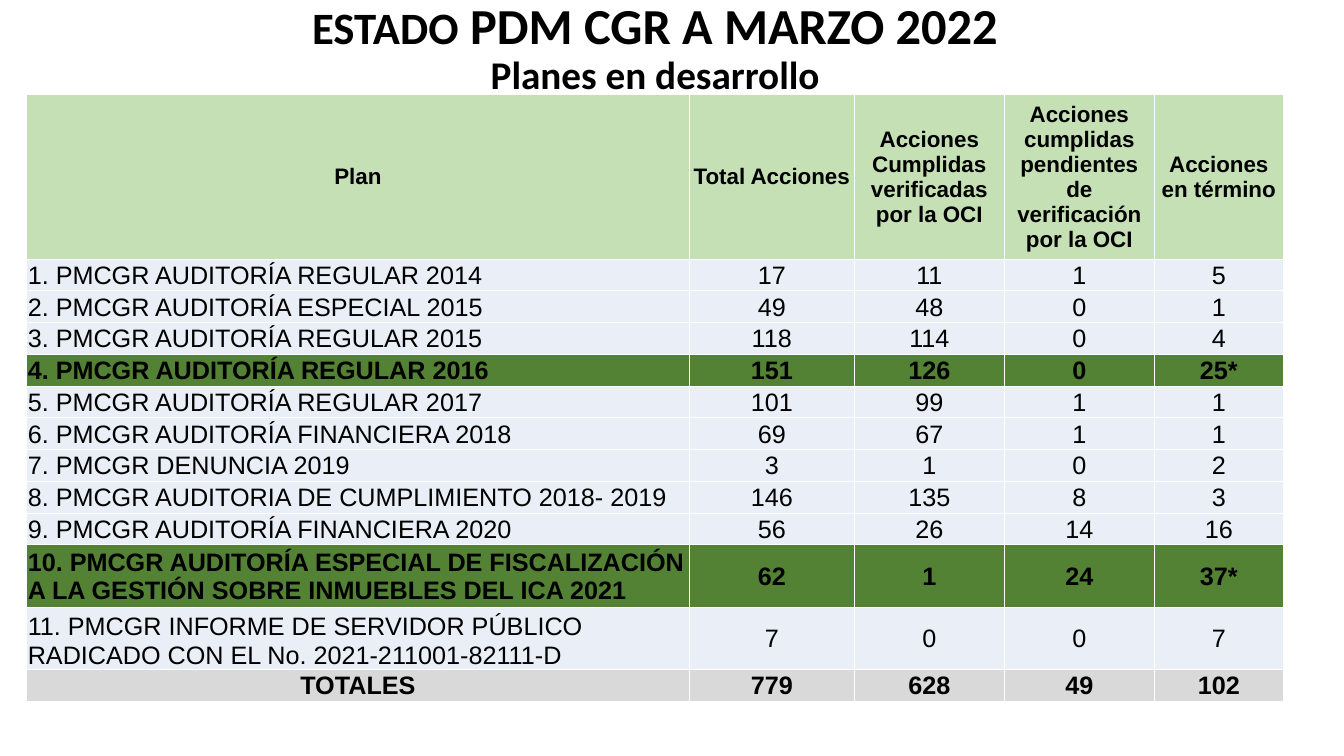
import lxml.etree
import pptx
import pptx.dml.color
import pptx.enum.text
import pptx.oxml.ns
import pptx.util

Cm, Pt = pptx.util.Cm, pptx.util.Pt
qn = pptx.oxml.ns.qn
ALIGN = pptx.enum.text.PP_ALIGN
ANCHOR = pptx.enum.text.MSO_ANCHOR

HEADER, PLAIN, MARKED, TOTAL = "C5E0B4", "EAEFF7", "548235", "D9D9D9"
COLUMN_WIDTHS = [16.7, 4.16, 3.78, 3.78, 3.25]
HEADER_HEIGHT, LINE_HEIGHT, DOUBLE_HEIGHT = 4.16, 0.8, 1.57

HEADINGS = [
    "Plan",
    "Total Acciones",
    "Acciones Cumplidas verificadas por la OCI",
    "Acciones cumplidas pendientes de verificación por la OCI",
    "Acciones en término",
]
PLANS = [
    ["1. PMCGR AUDITORÍA REGULAR 2014", "17", "11", "1", "5"],
    ["2. PMCGR AUDITORÍA ESPECIAL 2015", "49", "48", "0", "1"],
    ["3. PMCGR AUDITORÍA REGULAR 2015", "118", "114", "0", "4"],
    ["4. PMCGR AUDITORÍA REGULAR 2016", "151", "126", "0", "25*"],
    ["5. PMCGR AUDITORÍA REGULAR 2017", "101", "99", "1", "1"],
    ["6. PMCGR AUDITORÍA FINANCIERA 2018", "69", "67", "1", "1"],
    ["7. PMCGR DENUNCIA 2019", "3", "1", "0", "2"],
    ["8. PMCGR AUDITORIA DE CUMPLIMIENTO 2018- 2019", "146", "135", "8", "3"],
    ["9. PMCGR AUDITORÍA FINANCIERA 2020", "56", "26", "14", "16"],
    ["10. PMCGR AUDITORÍA ESPECIAL DE FISCALIZACIÓN A LA GESTIÓN SOBRE "
     "INMUEBLES DEL ICA 2021", "62", "1", "24", "37*"],
    ["11. PMCGR INFORME DE SERVIDOR PÚBLICO RADICADO CON EL "
     "No. 2021-211001-82111-D", "7", "0", "0", "7"],
]
TOTALS = ["TOTALES", "779", "628", "49", "102"]


def rgb(hex_color):
    return pptx.dml.color.RGBColor.from_string(hex_color)


def add_text(p, text, size=18, font="Arial", color="000000", bold=False):
    r = p.add_run()
    r.text = text
    r.font.size = Pt(size)
    r.font.name = font
    r.font.bold = bold
    r.font.color.rgb = rgb(color)


def add_title(s):
    title = s.shapes.title
    title.left, title.top = Cm(-0.56), Cm(0.33)
    title.width, title.height = Cm(34.14), Cm(1.83)
    tf = title.text_frame
    tf.auto_size = pptx.enum.text.MSO_AUTO_SIZE.NONE
    tf.vertical_anchor = ANCHOR.MIDDLE
    p = tf.paragraphs[0]
    p.alignment = ALIGN.CENTER
    p.line_spacing = 0.9
    add_text(p, "ESTADO", size=32, font="Calibri", bold=True)
    add_text(p, " PDM CGR A MARZO 2022", size=36, font="Calibri", bold=True)
    p.add_line_break()
    # The break needs its own size, or the first line grows to the default
    lxml.etree.SubElement(p._p.find(qn("a:br")), qn("a:rPr"), sz="3600")
    add_text(p, "Planes en desarrollo", size=28, font="Calibri", bold=True)


def set_borders(cell, color="FFFFFF", width=1):
    tc_pr = cell._tc.get_or_add_tcPr()
    for i, side in enumerate(("a:lnL", "a:lnR", "a:lnT", "a:lnB")):
        line = lxml.etree.Element(qn(side), w=str(Pt(width)))
        fill = lxml.etree.SubElement(line, qn("a:solidFill"))
        lxml.etree.SubElement(fill, qn("a:srgbClr"), val=color)
        tc_pr.insert(i, line)


def fill_cell(cell, text, fill, align=ALIGN.CENTER, anchor=ANCHOR.MIDDLE, **text_format):
    cell.margin_left = cell.margin_right = cell.margin_top = Cm(0.03)
    cell.margin_bottom = 0
    cell.vertical_anchor = anchor
    cell.fill.solid()
    cell.fill.fore_color.rgb = rgb(fill)
    set_borders(cell)
    p = cell.text_frame.paragraphs[0]
    p.alignment = align
    add_text(p, text, **text_format)


def fill_row(table, row, height, values, fill, **text_format):
    table.rows[row].height = Cm(height)
    for column, value in enumerate(values):
        fill_cell(table.cell(row, column), value, fill, **text_format)


def add_plan_table(s):
    frame = s.shapes.add_table(
        len(PLANS) + 2, len(HEADINGS), Cm(0.67), Cm(2.37),
        Cm(sum(COLUMN_WIDTHS)), Cm(15.3))
    table = frame.table
    table.first_row = table.horz_banding = False
    for column, width in zip(table.columns, COLUMN_WIDTHS):
        column.width = Cm(width)

    fill_row(table, 0, HEADER_HEIGHT, HEADINGS, HEADER, size=16, bold=True)
    for row, plan in enumerate(PLANS, start=1):
        marked = plan[-1].endswith("*")
        height = DOUBLE_HEIGHT if row >= 10 else LINE_HEIGHT
        fill_row(table, row, height, plan, MARKED if marked else PLAIN, bold=marked)
        table.cell(row, 0).text_frame.paragraphs[0].alignment = ALIGN.LEFT
    table.cell(len(PLANS), 0).vertical_anchor = ANCHOR.BOTTOM
    fill_row(table, len(PLANS) + 1, LINE_HEIGHT, TOTALS, TOTAL, bold=True)


def main():
    prs = pptx.Presentation()
    prs.slide_width, prs.slide_height = Cm(33.87), Cm(19.05)
    s = prs.slides.add_slide(prs.slide_layouts[5])
    add_title(s)
    add_plan_table(s)
    prs.save("out.pptx")


if __name__ == "__main__":
    main()
